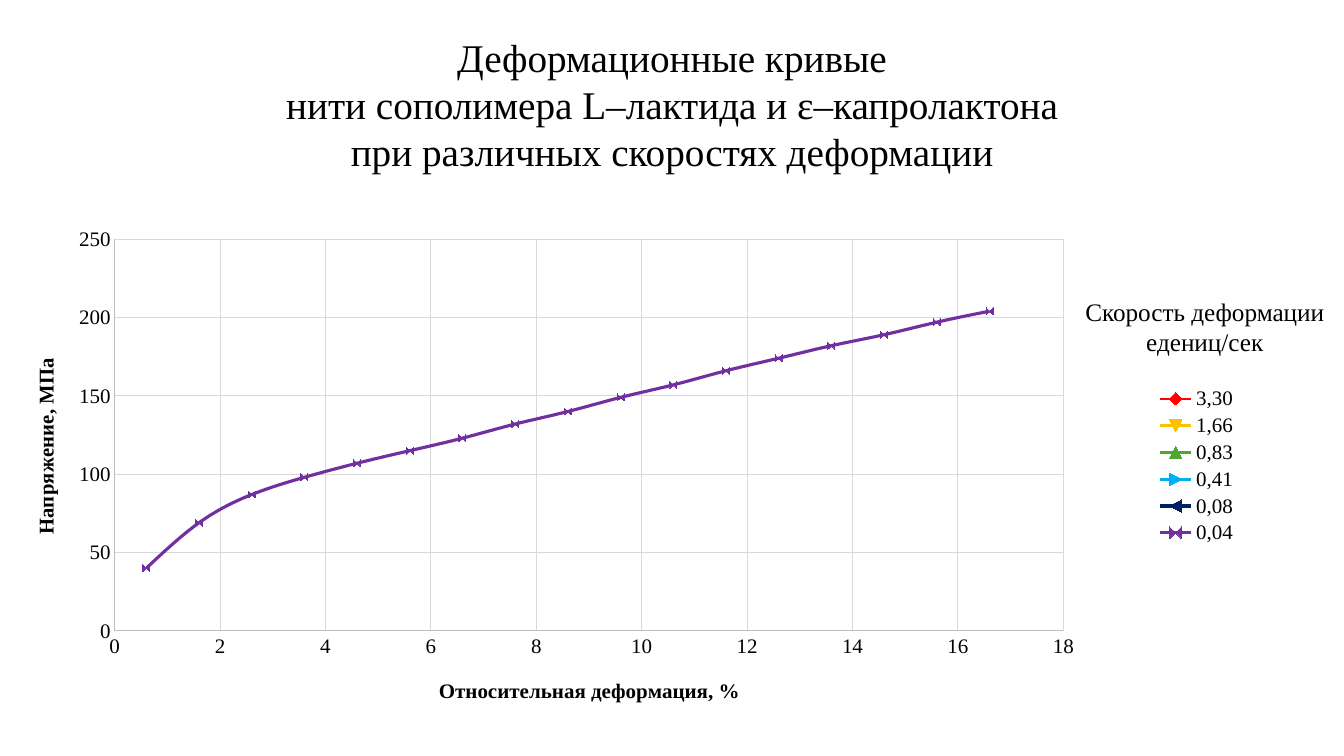
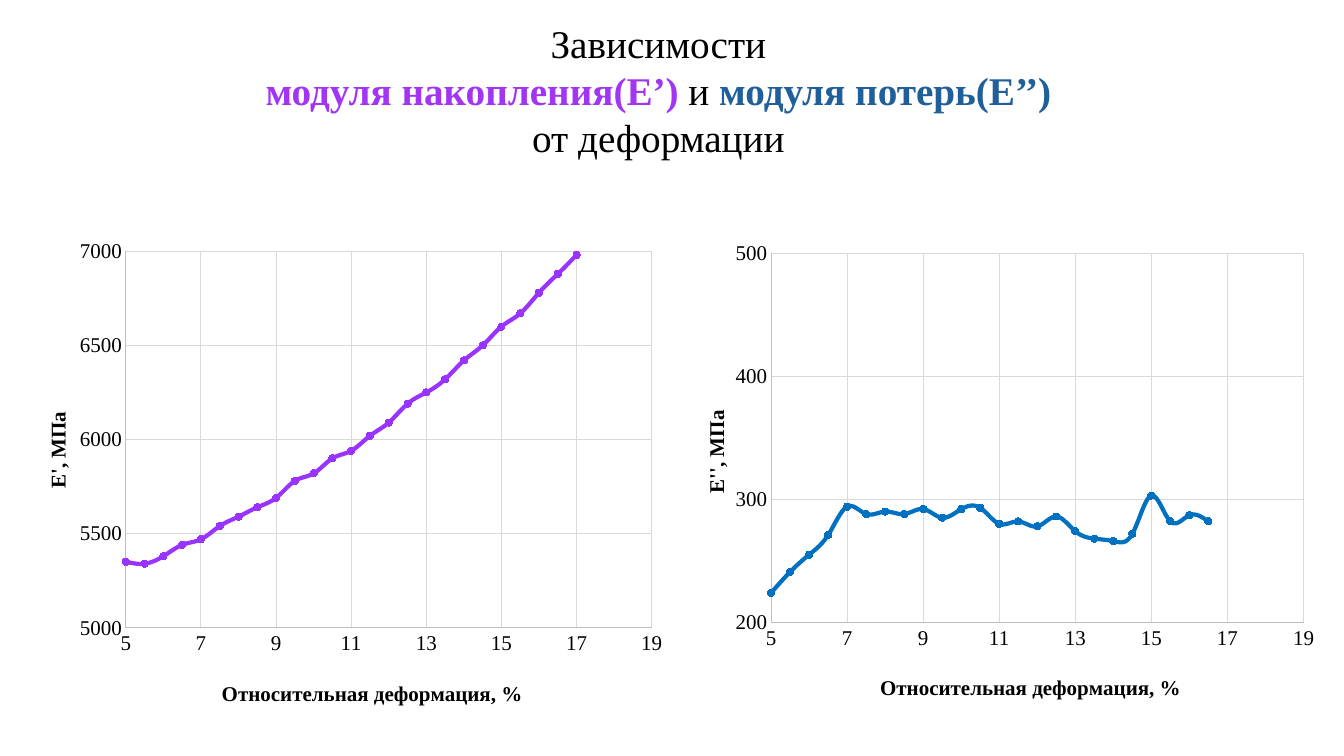
"""Build two slides of strain charts for a copolymer thread."""
import pptx
import pptx.chart.data
import pptx.dml.color
import pptx.enum.chart
import pptx.enum.text
import pptx.oxml
import pptx.util
from pptx.util import Inches

RGBColor = pptx.dml.color.RGBColor
BLACK = RGBColor(0x00, 0x00, 0x00)
AXIS_GRAY = RGBColor(0xBF, 0xBF, 0xBF)
GRID_GRAY = RGBColor(0xD9, 0xD9, 0xD9)
RED = RGBColor(0xFF, 0x00, 0x00)
AMBER = RGBColor(0xFF, 0xC0, 0x00)
GREEN = RGBColor(0x4E, 0xA7, 0x2E)
SKY = RGBColor(0x00, 0xB0, 0xF0)
NAVY = RGBColor(0x00, 0x20, 0x60)
PLUM = RGBColor(0x78, 0x20, 0x6E)
PURPLE = RGBColor(0x70, 0x30, 0xA0)
VIOLET = RGBColor(0x99, 0x33, 0xFF)
BLUE = RGBColor(0x00, 0x70, 0xC0)
TITLE_VIOLET = RGBColor(0xA2, 0x35, 0xF3)
TITLE_BLUE = RGBColor(0x21, 0x5F, 0x9A)
FONT = "Times New Roman"
STRAIN = "Относительная деформация, %"
MARKER = pptx.enum.chart.XL_MARKER_STYLE
CHART_NS = "http://schemas.openxmlformats.org/drawingml/2006/chart"


def write_lines(tf, lines, size):
    """Fill a text frame with centred lines of (text, colour, bold) runs."""
    tf.vertical_anchor = pptx.enum.text.MSO_ANCHOR.TOP
    for i, line in enumerate(lines):
        p = tf.paragraphs[0] if i == 0 else tf.add_paragraph()
        p.alignment = pptx.enum.text.PP_ALIGN.CENTER
        p.font.name = FONT
        p.font.size = pptx.util.Pt(size)
        for text, color, bold in line:
            r = p.add_run()
            r.text = text
            r.font.color.rgb = color
            r.font.bold = bold


def place(parent, index, **fractions):
    """Give a chart part a manual layout in fractions of the chart."""
    for old in parent.xpath("c:layout"):
        parent.remove(old)
    target = '<c:layoutTarget val="inner"/>' if "w" in fractions else ""
    modes = "".join(f'<c:{k}Mode val="edge"/>' for k in "xy")
    sizes = "".join(f'<c:{k} val="{v}"/>' for k, v in fractions.items())
    parent.insert(index, pptx.oxml.parse_xml(
        f'<c:layout xmlns:c="{CHART_NS}"><c:manualLayout>'
        f"{target}{modes}{sizes}</c:manualLayout></c:layout>"))


rate_series = [
    ("3,30", RED, RED, 1.5, 0.2, 0.8,
     [16, 46, 75, 99, 115, 126, 135, 143, 150, 158, 166, 175, 183, 192, 200, 209]),
    ("1,66", AMBER, AMBER, 2.25, 0.3, 1,
     [28, 73, 102, 116, 127, 135, 144, 155, 165, 175, 185, 195, 204, 213]),
    ("0,83", GREEN, GREEN, 2.25, 0.6, 1,
     [43, 79, 101, 114, 124, 133, 143, 152, 162, 172, 181, 191, 200, 208, 215]),
    ("0,41", SKY, SKY, 2.25, 0.7, 1,
     [34, 66, 90, 104, 114, 122, 131, 140, 150, 159, 168, 177, 186, 194, 201]),
    ("0,08", NAVY, PLUM, 2.25, 0.4, 1,
     [29, 67, 90, 104, 113, 122, 131, 140, 149, 159, 168, 178, 186, 195, 202]),
    ("0,04", PURPLE, PURPLE, 2.25, 0.6, 1,
     [40, 69, 87, 98, 107, 115, 123, 132, 140, 149, 157, 166, 174, 182, 189, 197, 204]),
]
storage_series = [
    ("E'", VIOLET, VIOLET, 3, 5, 0.5,
     [5350, 5340, 5380, 5440, 5470, 5540, 5590, 5640, 5690, 5780, 5820, 5900, 5940,
      6020, 6090, 6190, 6250, 6320, 6420, 6500, 6600, 6670, 6780, 6880, 6980]),
]
loss_series = [
    ("E''", BLUE, BLUE, 3, 5, 0.5,
     [224, 241, 255, 271, 294, 288, 290, 288, 292, 285, 292, 293,
      280, 282, 278, 286, 274, 268, 266, 272, 303, 282, 287, 282]),
]

slides = [
    dict(title_box=(0, 0.28, 13.33, 1.51),
         title=[[("Деформационные кривые", BLACK, False)],
                [("нити сополимера L–лактида и ε–капролактона", BLACK, False)],
                [("при различных скоростях деформации", BLACK, False)]],
         charts=[dict(box=(0.16, 2.26, 12.22, 4.77), series=rate_series,
                      marker=MARKER.AUTOMATIC, legend=True,
                      plot=(0.08, 0.02, 0.77, 0.83),
                      x_axis=(STRAIN, 0, 18, 2, 0.34, 0.94),
                      y_axis=("Напряжение, МПа", 0, 250, 50, 0.01, 0.27))]),
    dict(title_box=(0.28, 0.14, 12.5, 1.51),
         title=[[("Зависимости", BLACK, False)],
                [("модуля накопления(Е’) ", TITLE_VIOLET, True), ("и ", BLACK, False),
                 ("модуля потерь(Е’’)", TITLE_BLUE, True)],
                [("от деформации", BLACK, False)]],
         charts=[dict(box=(0.14, 2.3, 6.52, 4.85), series=storage_series,
                      marker=MARKER.CIRCLE, legend=False,
                      plot=(0.17, 0.04, 0.8, 0.77),
                      x_axis=(STRAIN, 5, 19, 2, 0.31, 0.91),
                      y_axis=("E', МПа", 5000, 7000, 500, 0.04, 0.36)),
                 dict(box=(6.67, 2.32, 6.52, 4.76), series=loss_series,
                      marker=MARKER.CIRCLE, legend=False,
                      plot=(0.15, 0.04, 0.81, 0.77),
                      x_axis=(STRAIN, 5, 19, 2, 0.31, 0.91),
                      y_axis=("E'', МПа", 200, 500, 100, 0.04, 0.36))]),
]

prs = pptx.Presentation()
prs.slide_width = Inches(13.33)
prs.slide_height = Inches(7.5)

for slide in slides:
    s = prs.slides.add_slide(prs.slide_layouts[5])
    title = s.shapes.title
    title.left, title.top, title.width, title.height = map(Inches, slide["title_box"])
    write_lines(title.text_frame, slide["title"], 28)

    for c in slide["charts"]:
        data = pptx.chart.data.XyChartData()
        for name, _, _, _, start, step, values in c["series"]:
            xy = data.add_series(name)
            for i, value in enumerate(values):
                xy.add_data_point(round(start + i * step, 1), value)
        chart = s.shapes.add_chart(pptx.enum.chart.XL_CHART_TYPE.XY_SCATTER_SMOOTH,
                                   *map(Inches, c["box"]), data).chart
        chart.has_title = False
        chart.font.name = FONT
        chart.font.size = pptx.util.Pt(15)
        chart.font.color.rgb = BLACK
        chart.has_legend = c["legend"]
        if c["legend"]:
            chart.legend.position = pptx.enum.chart.XL_LEGEND_POSITION.RIGHT
            chart.legend.include_in_layout = False
        plot = chart.plots[0]
        plot.vary_by_categories = False
        place(chart._chartSpace.chart.plotArea, 0, **dict(zip("xywh", c["plot"])))

        for i, (ser, row) in enumerate(zip(plot.series, c["series"]), 1):
            _, line_color, marker_color, width, _, _, _ = row
            ser._element.idx.val = i
            ser._element.xpath("c:smooth")[0].set("val", "1")
            ser.format.line.color.rgb = line_color
            ser.format.line.width = pptx.util.Pt(width)
            ser.marker.style = c["marker"]
            ser.marker.size = 5
            ser.marker.format.fill.solid()
            ser.marker.format.fill.fore_color.rgb = marker_color
            ser.marker.format.line.color.rgb = marker_color

        for axis, key in ((chart.category_axis, "x_axis"), (chart.value_axis, "y_axis")):
            text, low, high, step, x, y = c[key]
            axis.minimum_scale, axis.maximum_scale, axis.major_unit = low, high, step
            axis.major_tick_mark = pptx.enum.chart.XL_TICK_MARK.NONE
            axis.minor_tick_mark = pptx.enum.chart.XL_TICK_MARK.NONE
            axis.has_major_gridlines = True
            for line, color in ((axis.format.line, AXIS_GRAY),
                                (axis.major_gridlines.format.line, GRID_GRAY)):
                line.color.rgb = color
                line.width = pptx.util.Pt(0.75)
            tf = axis.axis_title.text_frame
            tf.text = text
            font = tf.paragraphs[0].font
            font.name = FONT
            font.size = pptx.util.Pt(15)
            font.bold = True
            font.color.rgb = BLACK
            if key == "y_axis":
                tf._txBody.bodyPr.set("rot", "-5400000")
                tf._txBody.bodyPr.set("vert", "horz")
            place(axis.axis_title._element, 1, x=x, y=y)

legend_title = prs.slides[0].shapes.add_textbox(
    Inches(10.65), Inches(2.89), Inches(2.6), Inches(0.71))
legend_title.text_frame.word_wrap = False
write_lines(legend_title.text_frame,
            [[("Скорость деформации", BLACK, False)], [("едениц/сек", BLACK, False)]], 18)

prs.save("out.pptx")
